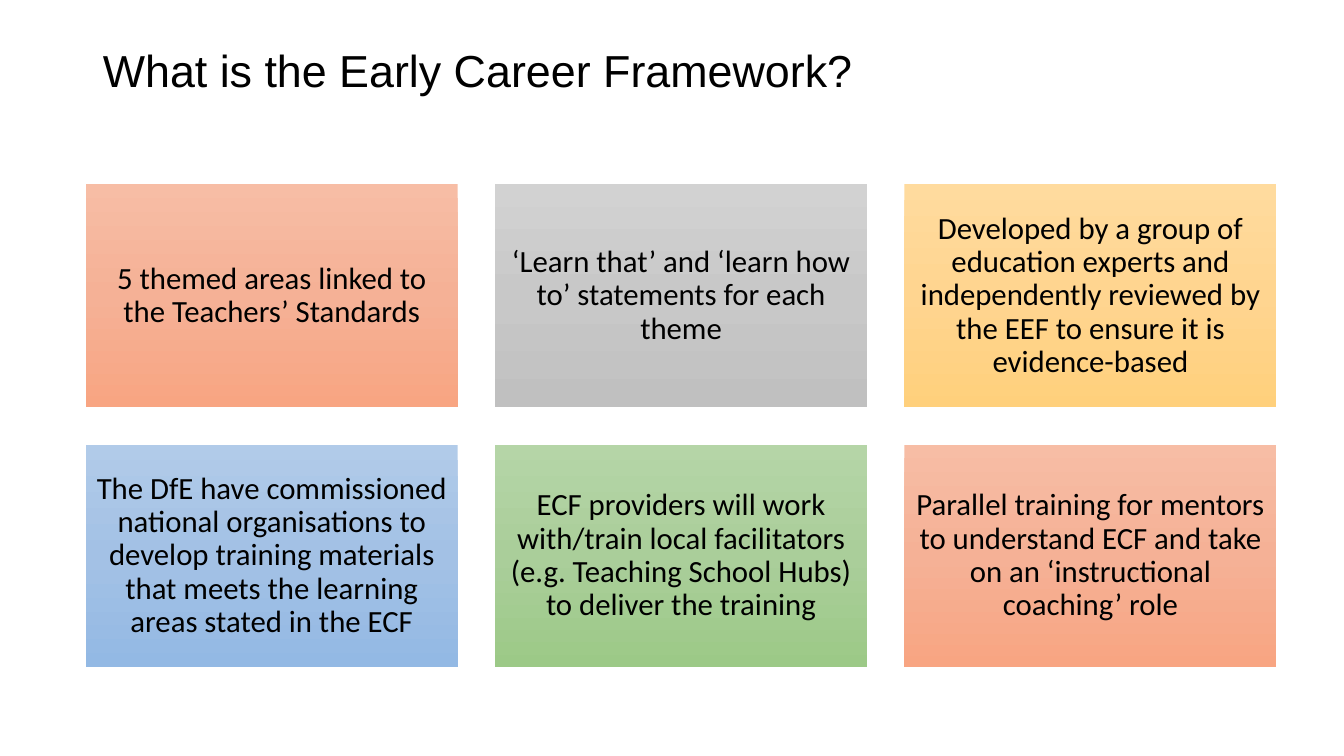
import copy

import pptx
import pptx.util
import pptx.dml.color
import pptx.enum.shapes
import pptx.enum.text

Inches = pptx.util.Inches
Pt = pptx.util.Pt

INK = "000000"
COLORS = {
    "orange": ("F7BDA5", "F5B196", "F8A582"),
    "grey": ("D2D2D2", "C8C8C8", "C0C0C0"),
    "gold": ("FFDB9E", "FFD590", "FFD07C"),
    "blue": ("B1CBE9", "A3C1E5", "93B9E4"),
    "green": ("B5D5A7", "AACE9A", "9CC987"),
}

CARDS = [
    ("orange", "5 themed areas linked to the Teachers’ Standards"),
    ("grey", "‘Learn that’ and ‘learn how to’ statements for each theme"),
    ("gold", "Developed by a group of education experts and independently "
             "reviewed by the EEF to ensure it is evidence-based"),
    ("blue", "The DfE have commissioned national organisations to develop "
             "training materials that meets the learning areas stated in the ECF"),
    ("green", "ECF providers will work with/train local facilitators "
              "(e.g. Teaching School Hubs) to deliver the training"),
    ("orange", "Parallel training for mentors to understand ECF and take on "
               "an ‘instructional coaching’ role"),
]

COLS = 3
LEFT, TOP = 0.85, 1.83
WIDTH, HEIGHT = 3.69, 2.21
GAP = 0.37


def write(frame, text, font, size, align):
    frame.word_wrap = True
    frame.auto_size = pptx.enum.text.MSO_AUTO_SIZE.NONE
    frame.vertical_anchor = pptx.enum.text.MSO_ANCHOR.MIDDLE
    para = frame.paragraphs[0]
    para.alignment = align
    para.line_spacing = 0.9
    run = para.add_run()
    run.text = text
    run.font.name = font
    run.font.size = Pt(size)
    run.font.color.rgb = pptx.dml.color.RGBColor.from_string(INK)


def shade(shape, colors):
    """Fill from top to bottom with three evenly spaced colours."""
    fill = shape.fill
    fill.gradient()
    fill.gradient_angle = 270
    stops = shape.element.xpath(".//a:gsLst/a:gs")
    middle = copy.deepcopy(stops[0])
    middle.set("pos", "50000")
    stops[0].addnext(middle)
    for stop, color in zip(fill.gradient_stops, colors):
        stop.color.rgb = pptx.dml.color.RGBColor.from_string(color)


def add_title(slide, text):
    title = slide.shapes.title
    title.left, title.top = Inches(0.92), Inches(0.18)
    title.width, title.height = Inches(11.5), Inches(1.08)
    write(title.text_frame, text, "Arial", 32, pptx.enum.text.PP_ALIGN.LEFT)


def add_card(slide, index, color, text):
    row, col = divmod(index, COLS)
    card = slide.shapes.add_shape(
        pptx.enum.shapes.MSO_SHAPE.RECTANGLE,
        Inches(LEFT + col * (WIDTH + GAP)),
        Inches(TOP + row * (HEIGHT + GAP)),
        Inches(WIDTH), Inches(HEIGHT))
    card.shadow.inherit = False
    card.line.fill.background()
    shade(card, COLORS[color])
    frame = card.text_frame
    frame.margin_left = frame.margin_right = Inches(0.09)
    frame.margin_top = frame.margin_bottom = Inches(0.09)
    write(frame, text, "Calibri", 22, pptx.enum.text.PP_ALIGN.CENTER)


def main():
    deck = pptx.Presentation()
    deck.slide_width, deck.slide_height = Inches(13.33), Inches(7.5)
    slide = deck.slides.add_slide(deck.slide_layouts.get_by_name("Title Only"))
    add_title(slide, "What is the Early Career Framework?")
    for index, (color, text) in enumerate(CARDS):
        add_card(slide, index, color, text)
    deck.save("out.pptx")


if __name__ == "__main__":
    main()
